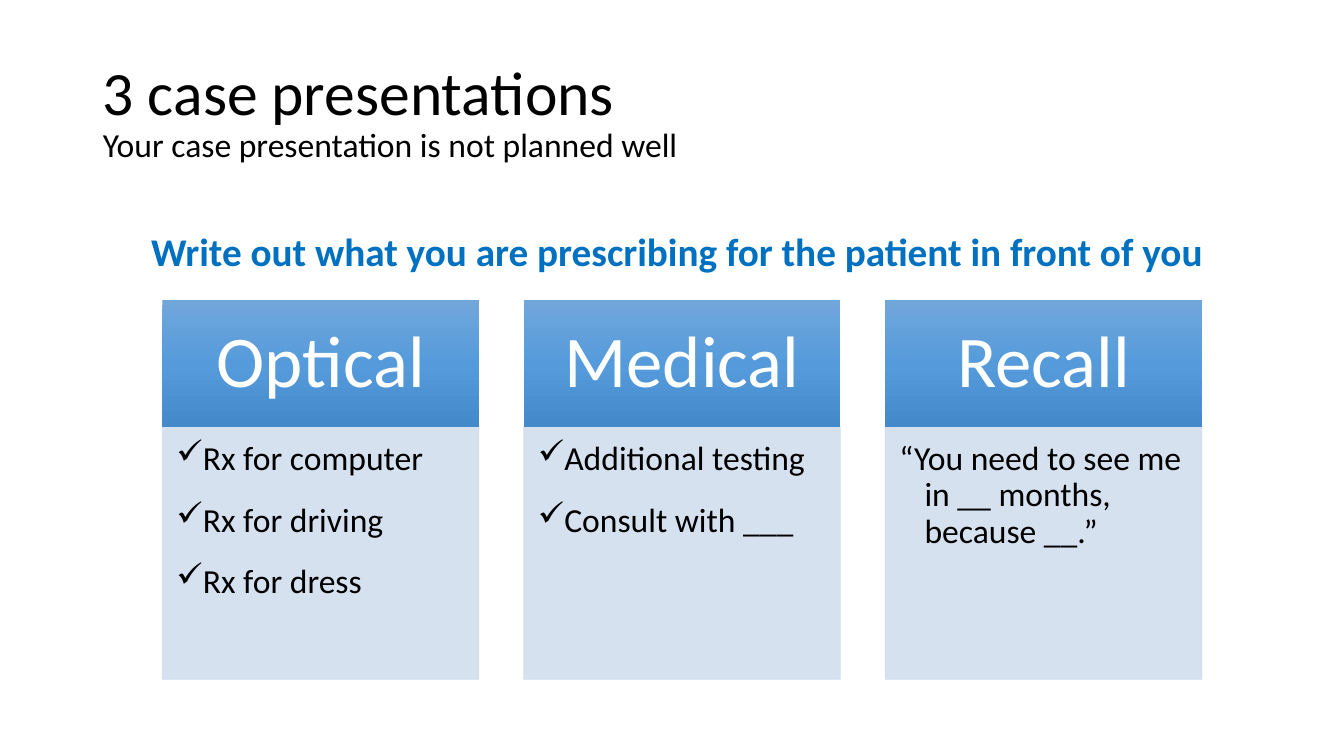
"""Build a slide with three columns of case presentations."""
import copy
import pptx
import pptx.util
import pptx.oxml
import pptx.oxml.ns
import pptx.dml.color
import pptx.enum.shapes
import pptx.enum.text

Inches = pptx.util.Inches
Align = pptx.enum.text.PP_ALIGN
Anchor = pptx.enum.text.MSO_ANCHOR
Fit = pptx.enum.text.MSO_AUTO_SIZE
qn = pptx.oxml.ns.qn

COLORS = {
    "black": "000000", "white": "FFFFFF", "blue": "0070C0", "pale": "D2DEEF",
    "top": "71A6DB", "mid": "559BDB", "low": "448ACA",
}
RGB = {name: pptx.dml.color.RGBColor.from_string(code) for name, code in COLORS.items()}
LEFT, PITCH, WIDTH = 1.61, 3.585, 3.14
HEAD_TOP, HEAD_TALL, BODY_TALL = 2.98, 1.26, 2.5
COLUMNS = [
    ("Optical", "✓", ["Rx for computer", "Rx for driving", "Rx for dress"]),
    ("Medical", "✓", ["Additional testing", "Consult with ___"]),
    ("Recall", None, ["“You need to see me in __ months, because __.”"]),
]


def write(para, text, size, color="black", bold=False):
    run = para.add_run()
    run.text = text
    style = {"name": "Calibri", "size": pptx.util.Pt(size), "bold": bold}
    for key, value in style.items():
        setattr(run.font, key, value)
    run.font.color.rgb = RGB[color]


def block(left, top, tall, insets, anchor):
    shape = slide.shapes.add_shape(
        pptx.enum.shapes.MSO_SHAPE.RECTANGLE,
        Inches(left), Inches(top), Inches(WIDTH), Inches(tall))
    shape.shadow.inherit = False
    frame = shape.text_frame
    frame.word_wrap = True
    frame.vertical_anchor = anchor
    for side, inset in zip(("left", "top", "right", "bottom"), insets):
        setattr(frame, f"margin_{side}", Inches(inset))
    return shape


deck = pptx.Presentation()
deck.slide_width, deck.slide_height = Inches(13.33), Inches(7.5)
slide = deck.slides.add_slide(deck.slide_layouts[5])

title = slide.shapes.title
place = {"left": 0.92, "top": 0.4, "width": 11.5, "height": 1.45}
for key, value in place.items():
    setattr(title, key, Inches(value))
title.text_frame.vertical_anchor = Anchor.MIDDLE
title.text_frame.auto_size = Fit.NONE
para = title.text_frame.paragraphs[0]
para.alignment, para.line_spacing = Align.LEFT, 0.9
write(para, "3 case presentations", 44)
para.add_line_break()
write(para, "Your case presentation is not planned well", 24)

for col, (name, mark, items) in enumerate(COLUMNS):
    left = LEFT + col * PITCH

    head = block(left, HEAD_TOP, HEAD_TALL, (0.4, 0.23, 0.4, 0.23), Anchor.MIDDLE)
    head.line.fill.background()
    head.fill.gradient()
    head.fill.gradient_angle = 270
    first = head.element.find(".//" + qn("a:gs"))
    first.addnext(copy.deepcopy(first))
    for stop, shade, spot in zip(head.fill.gradient_stops, ("top", "mid", "low"), (0, 0.5, 1)):
        stop.color.rgb, stop.position = RGB[shade], spot
    para = head.text_frame.paragraphs[0]
    para.alignment, para.line_spacing = Align.CENTER, 0.9
    write(para, name, 52, "white")

    body = block(left, HEAD_TOP + HEAD_TALL, BODY_TALL, (0.14, 0.14, 0.19, 0.21), Anchor.TOP)
    body.fill.solid()
    body.fill.fore_color.rgb = body.line.color.rgb = RGB["pale"]
    body.line.width = pptx.util.Pt(0.5)
    for tint in body.element.iter(qn("a:srgbClr")):
        pptx.oxml.parse_xml(f'<a:alpha {pptx.oxml.ns.nsdecls("a")} val="90000"/>')
        tint.append(pptx.oxml.parse_xml(f'<a:alpha {pptx.oxml.ns.nsdecls("a")} val="90000"/>'))
    for row, item in enumerate(items):
        frame = body.text_frame
        para = frame.add_paragraph() if row else frame.paragraphs[0]
        props = para._p.get_or_add_pPr()
        props.set("marL", str(Inches(0.25)))
        props.set("indent", str(Inches(-0.25)))
        if mark:
            props.append(pptx.oxml.parse_xml(
                f'<a:buChar {pptx.oxml.ns.nsdecls("a")} char="{mark}"/>'))
        para.alignment, para.line_spacing = Align.LEFT, 0.9
        para.space_after = pptx.util.Pt(18)
        write(para, item, 24)

call = slide.shapes.add_textbox(Inches(1.4), Inches(2.21), Inches(10.76), Inches(0.57))
call.text_frame.word_wrap = False
call.text_frame.auto_size = Fit.SHAPE_TO_FIT_TEXT
write(call.text_frame.paragraphs[0],
      "Write out what you are prescribing for the patient in front of you", 28, "blue", True)

deck.save("out.pptx")
